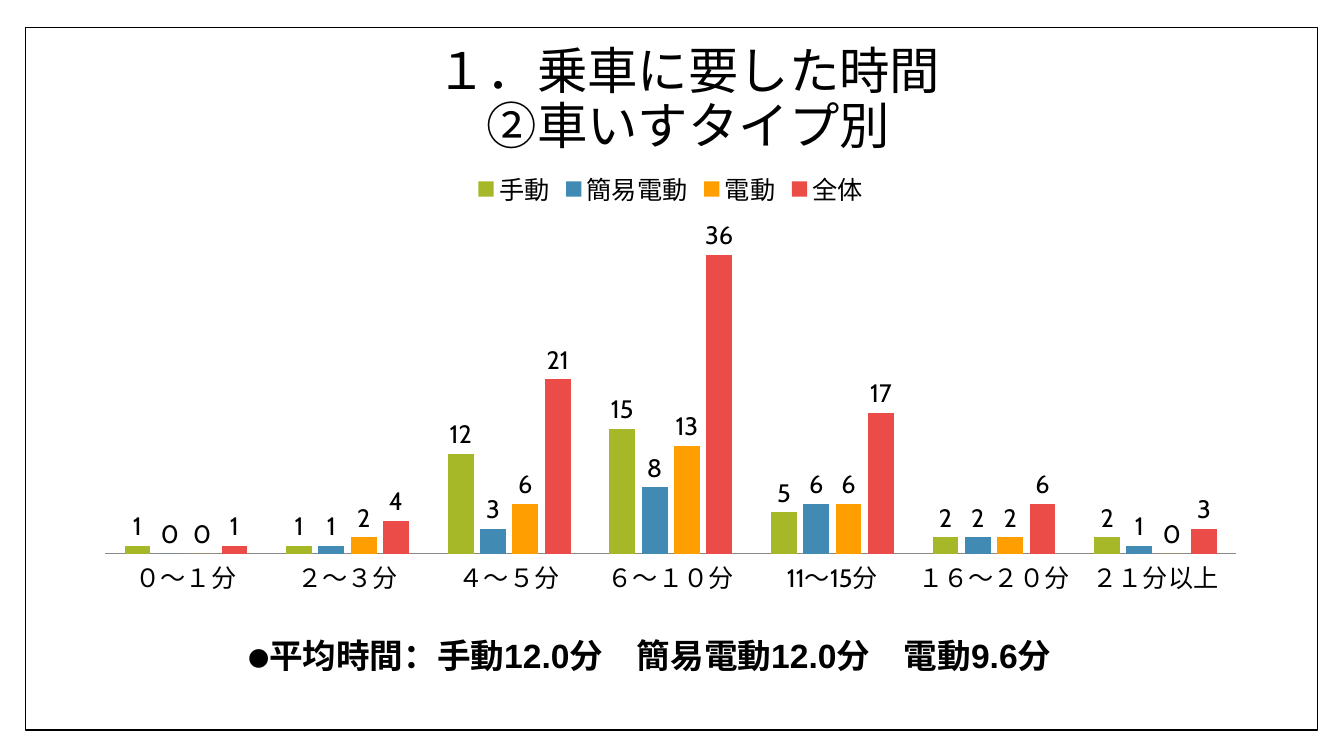
from pptx import Presentation
from pptx.chart.data import CategoryChartData
from pptx.dml.color import RGBColor
from pptx.enum.chart import XL_CHART_TYPE, XL_LABEL_POSITION, XL_LEGEND_POSITION, XL_TICK_MARK
from pptx.enum.shapes import MSO_SHAPE
from pptx.enum.text import MSO_ANCHOR, PP_ALIGN
from pptx.util import Pt

COLUMNS = XL_CHART_TYPE.COLUMN_CLUSTERED
OUTSIDE = XL_LABEL_POSITION.OUTSIDE_END
LEGEND_TOP = XL_LEGEND_POSITION.TOP
NO_TICK = XL_TICK_MARK.NONE
RECT = MSO_SHAPE.RECTANGLE
TOP, MIDDLE = MSO_ANCHOR.TOP, MSO_ANCHOR.MIDDLE
LEFT, CENTER = PP_ALIGN.LEFT, PP_ALIGN.CENTER

CATEGORIES = ["０～１分", "２～３分", "４～５分", "６～１０分", "11～15分", "１６～２０分", "２１分以上"]
WHEELCHAIRS = [
    ("手動", "A6B727", (1, 1, 12, 15, 5, 2, 2)),
    ("簡易電動", "418AB3", (0, 1, 3, 8, 6, 2, 1)),
    ("電動", "FE9E00", (0, 2, 6, 13, 6, 2, 0)),
    ("全体", "EB4C48", (1, 4, 21, 36, 17, 6, 3)),
]


def rgb(value):
    return RGBColor.from_string(value)


class Deck:
    ink, paper, axis = "000000", "FFFFFF", "898989"
    heading_font, body_font = "Cabin", "Arial"

    def __init__(self, width, height):
        self.prs = Presentation()
        self.prs.slide_width, self.prs.slide_height = Pt(width), Pt(height)
        self.slide = self.prs.slides.add_slide(self.prs.slide_layouts[6])

    def style(self, font, name, size, bold=False):
        font.name, font.size, font.bold = name, Pt(size), bold
        font.color.rgb = rgb(self.ink)

    def frame(self, *box):
        sp = self.slide.shapes.add_shape(RECT, *map(Pt, box))
        sp.shadow.inherit = False
        sp.fill.solid()
        sp.fill.fore_color.rgb = rgb(self.paper)
        sp.line.color.rgb = rgb(self.ink)
        sp.line.width = Pt(1)

    def text(self, text, box, font, size, bold=False, align=LEFT, anchor=TOP, spacing=1.0):
        tf = self.slide.shapes.add_textbox(*map(Pt, box)).text_frame
        tf.word_wrap = True
        tf.vertical_anchor = anchor
        tf.text = text
        p = tf.paragraphs[0]
        p.alignment, p.line_spacing = align, spacing
        for r in p.runs:
            self.style(r.font, font, size, bold)

    def column_chart(self, categories, series, box, top_value):
        data = CategoryChartData()
        data.categories = categories
        for name, _, values in series:
            data.add_series(name, values)
        chart = self.slide.shapes.add_chart(COLUMNS, *map(Pt, box), data).chart
        self.style(chart.font, self.heading_font, 18)
        chart.has_title = False
        chart.has_legend = True
        chart.legend.position = LEGEND_TOP
        chart.legend.include_in_layout = False

        value_axis = chart.value_axis
        value_axis.visible = False
        value_axis.has_major_gridlines = False
        value_axis.minimum_scale, value_axis.maximum_scale = 0, top_value
        category_axis = chart.category_axis
        category_axis.major_tick_mark = NO_TICK
        category_axis.format.line.color.rgb = rgb(self.axis)
        category_axis.format.line.width = Pt(0.75)

        plot = chart.plots[0]
        plot.gap_width, plot.overlap = 150, -25
        plot.vary_by_categories = False
        for column, (_, color, _) in zip(plot.series, series):
            column.format.fill.solid()
            column.format.fill.fore_color.rgb = rgb(color)
            labels = column.data_labels
            labels.show_value = True
            labels.position = OUTSIDE
            self.style(labels.font, self.heading_font, 18)


def main():
    deck = Deck(960, 540)
    deck.frame(18, 19.5, 923, 502)
    deck.text("１．乗車に要した時間\v②車いすタイプ別", (67.7, 33, 848, 78),
              deck.heading_font, 36, align=CENTER, anchor=MIDDLE, spacing=0.9)
    deck.text("⚫平均時間：手動12.0分　簡易電動12.0分　電動9.6分　", (170.6, 450, 632, 36),
              deck.body_font, 24, bold=True)
    deck.column_chart(CATEGORIES, WHEELCHAIRS, (58.3, 113, 841.7, 318.2), 40)
    deck.prs.save("out.pptx")


if __name__ == "__main__":
    main()
